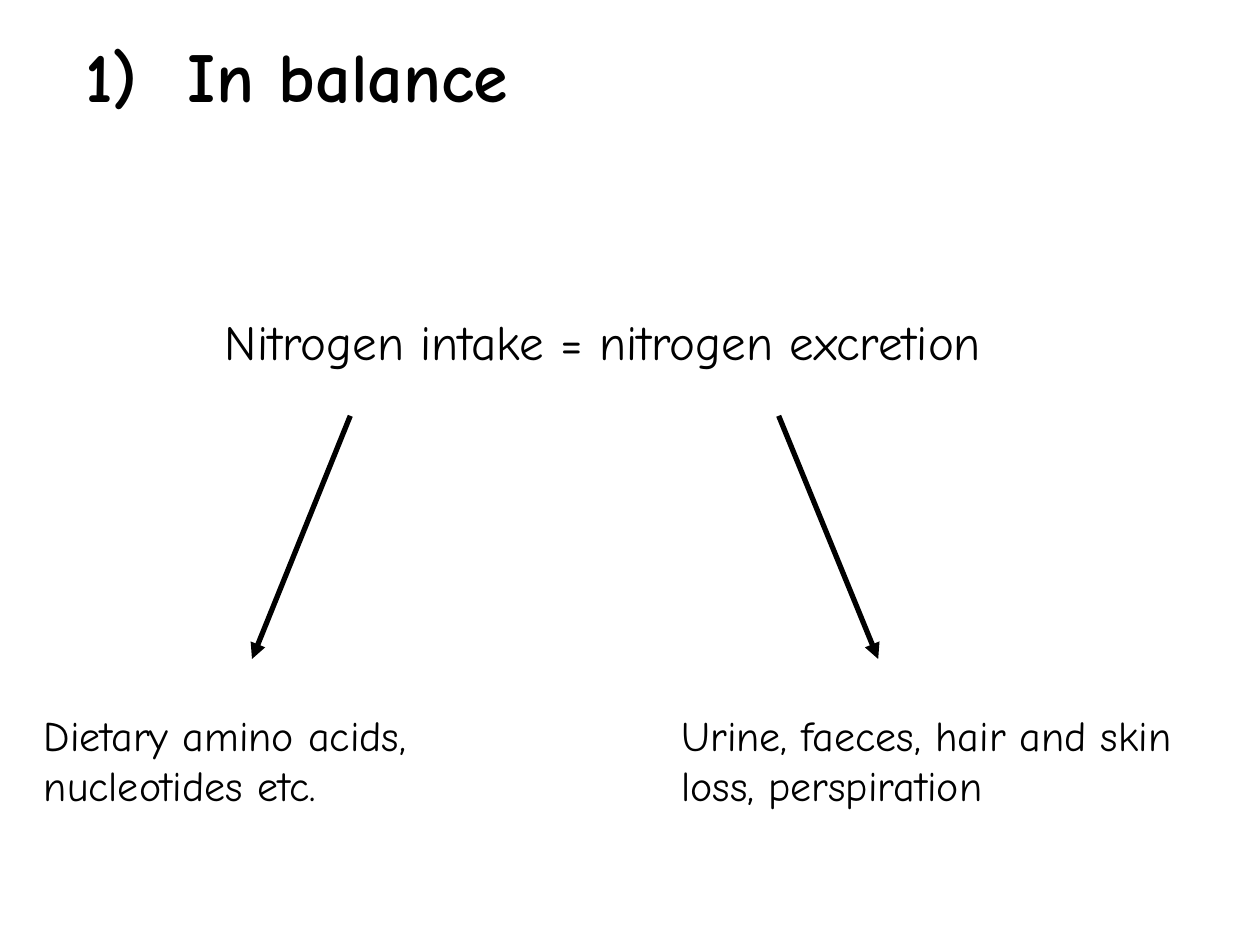
import pptx
import pptx.util
import pptx.dml.color
import pptx.enum.shapes
import pptx.enum.text
import lxml.etree
from pptx.util import Inches
from pptx.oxml.ns import qn

FONT = "Comic Neue"
BLACK = "000000"


def color(hex_string):
    return pptx.dml.color.RGBColor.from_string(hex_string)


def add_text(slide, box, text, size, bold=False, centered=False, wrap=True):
    shape = slide.shapes.add_textbox(*box)
    frame = shape.text_frame
    frame.word_wrap = wrap
    frame.auto_size = pptx.enum.text.MSO_AUTO_SIZE.SHAPE_TO_FIT_TEXT
    paragraph = frame.paragraphs[0]
    alignment = pptx.enum.text.PP_ALIGN
    paragraph.alignment = alignment.CENTER if centered else alignment.LEFT
    run = paragraph.add_run()
    run.text = text
    run.font.name = FONT
    run.font.size = pptx.util.Pt(size)
    run.font.bold = bold
    run.font.color.rgb = color(BLACK)


def add_arrow(slide, start, end):
    arrow = slide.shapes.add_connector(
        pptx.enum.shapes.MSO_CONNECTOR.STRAIGHT, *start, *end)
    arrow.line.color.rgb = color(BLACK)
    arrow.line.width = pptx.util.Pt(3)
    line = arrow.line._get_or_add_ln()
    lxml.etree.SubElement(line, qn("a:tailEnd"), type="triangle")
    lxml.etree.SubElement(arrow._element.spPr, qn("a:effectLst"))


def add_balance_diagram(slide, left, top, width):
    """Place the equation with one arrow and one list of sources per side."""
    add_text(slide, (left + Inches(0.17), top, width - Inches(0.52), Inches(0.64)),
             "Nitrogen intake = nitrogen excretion", 28, centered=True)
    branches = [
        (2.53, 1.75, 0, 3.67, "Dietary amino acids, nucleotides etc."),
        (5.93, 6.72, 5.06, 4.19, "Urine, faeces, hair and skin loss, perspiration"),
    ]
    arrow_top, arrow_bottom = top + Inches(0.88), top + Inches(2.81)
    for start, end, text_left, text_width, text in branches:
        add_arrow(slide, (left + Inches(start), arrow_top),
                  (left + Inches(end), arrow_bottom))
        add_text(slide, (left + Inches(text_left), top + Inches(3.16),
                         Inches(text_width), Inches(1.03)), text, 24)


def main():
    presentation = pptx.Presentation()
    presentation.slide_width = Inches(10)
    presentation.slide_height = Inches(7.5)
    slide = presentation.slides.add_slide(presentation.slide_layouts[6])
    title_box = (Inches(0.58), Inches(0.21), Inches(4.05), Inches(0.77))
    add_text(slide, title_box, "1)  In balance", 40, bold=True, wrap=False)
    add_balance_diagram(slide, Inches(0.25), Inches(2.42), Inches(9.25))
    presentation.save("out.pptx")


if __name__ == "__main__":
    main()
